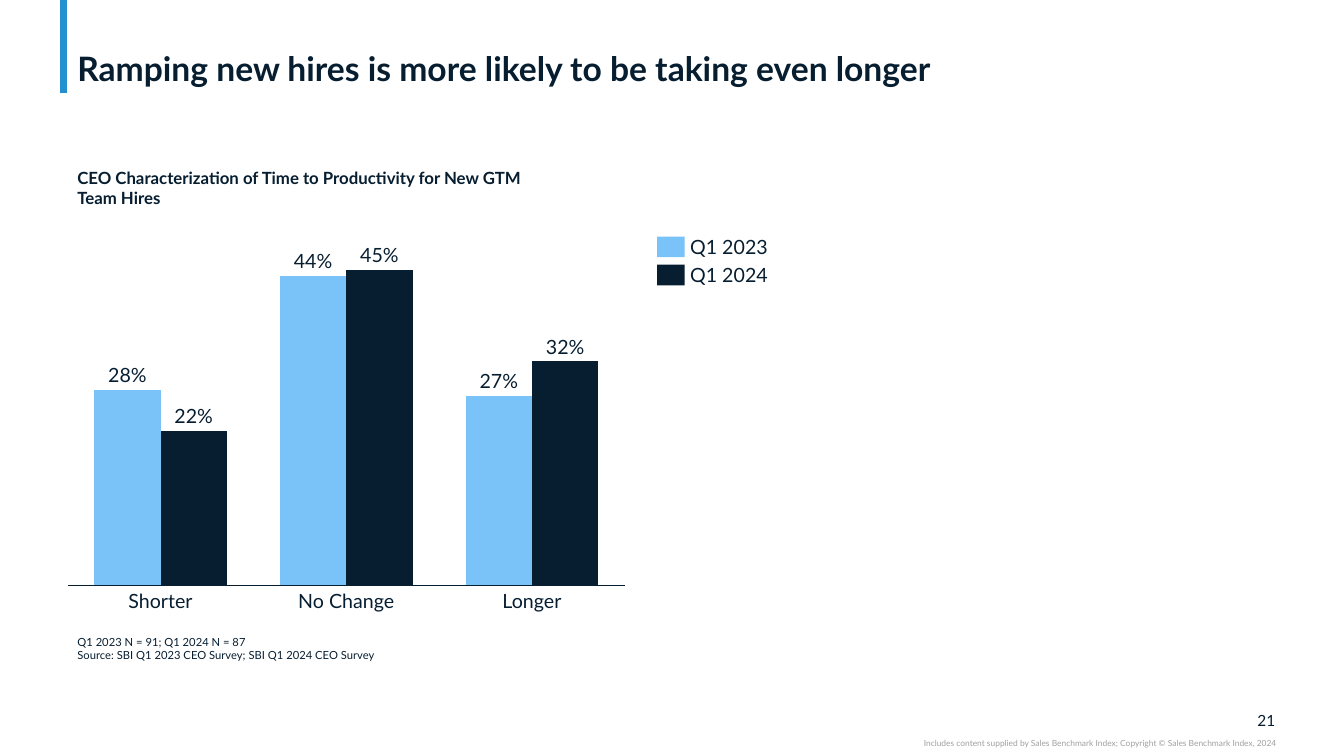
from dataclasses import dataclass

from lxml import etree
from pptx import Presentation
from pptx.chart.data import CategoryChartData
from pptx.dml.color import RGBColor
from pptx.enum.chart import XL_CHART_TYPE as ChartType, XL_TICK_LABEL_POSITION as LabelPos, XL_TICK_MARK as Tick
from pptx.enum.shapes import MSO_CONNECTOR as Connector, MSO_SHAPE as Shape
from pptx.enum.text import MSO_ANCHOR as Anchor, PP_ALIGN as Align
from pptx.oxml import parse_xml
from pptx.oxml.ns import nsdecls, qn
from pptx.util import Pt


@dataclass(frozen=True)
class Theme:
    font: str = "Lato"
    ink: RGBColor = RGBColor(0x07, 0x1E, 0x31)
    sky: RGBColor = RGBColor(0x7A, 0xC3, 0xF8)
    accent: RGBColor = RGBColor(0x23, 0x91, 0xCF)
    muted: RGBColor = RGBColor(0xA0, 0xA0, 0xA0)
    title: float = 24
    label: float = 14
    heading: float = 12
    page: float = 11
    axis: float = 10
    note: float = 8
    legal: float = 6


class SlideBuilder:
    def __init__(self, slide, theme):
        self.shapes = slide.shapes
        self.theme = theme

    def style(self, font, size, color=None, bold=False):
        font.name, font.size, font.bold = self.theme.font, Pt(size), bold
        font.color.rgb = color or self.theme.ink

    def text(self, box, lines, size, color=None, bold=False, align=Align.LEFT,
             anchor=Anchor.TOP, insets=(0, 0), spacing=None, wrap=True):
        """Box is left, top, width, height; insets are side and top/bottom."""
        frame = self.shapes.add_textbox(*map(Pt, box)).text_frame
        frame.word_wrap, frame.vertical_anchor = wrap, anchor
        frame.margin_left = frame.margin_right = Pt(insets[0])
        frame.margin_top = frame.margin_bottom = Pt(insets[1])
        frame.text = lines
        for paragraph in frame.paragraphs:
            paragraph.alignment = align
            paragraph.line_spacing = spacing
            self.style(paragraph.font, size, color, bold)

    def chart_label(self, box, words, align=Align.CENTER, **options):
        self.text(box, words, self.theme.label, align=align, spacing=0.9, wrap=False, **options)

    def line(self, start, end, color, weight):
        rule = self.shapes.add_connector(Connector.STRAIGHT, *map(Pt, start + end))
        rule.line.color.rgb, rule.line.width = color, Pt(weight)
        etree.SubElement(rule._element.spPr, qn("a:effectLst"))

    def swatch(self, box, color):
        square = self.shapes.add_shape(Shape.RECTANGLE, *map(Pt, box))
        square.shadow.inherit = False
        square.fill.solid()
        square.fill.fore_color.rgb = color
        square.line.fill.background()

    def columns(self, box, plot, categories, series, gap):
        """Draw clustered columns; plot holds the inner plot area as fractions of the box."""
        data = CategoryChartData()
        data.categories = categories
        for name, heights, _ in series:
            data.add_series(name, heights)
        chart = self.shapes.add_chart(ChartType.COLUMN_CLUSTERED, *map(Pt, box), data).chart
        chart.has_legend = chart.has_title = False
        self.style(chart.font, self.theme.axis)

        bars = chart.plots[0]
        bars.gap_width, bars.overlap, bars.vary_by_categories = gap, 0, False
        for column, (_, _, color) in zip(bars.series, series):
            column.format.fill.solid()
            column.format.fill.fore_color.rgb = color

        baseline = chart.category_axis
        baseline.tick_label_position = LabelPos.NONE
        baseline.major_tick_mark = baseline.minor_tick_mark = Tick.NONE
        baseline.format.line.color.rgb = self.theme.ink
        baseline.format.line.width = Pt(0.75)
        scale = chart.value_axis
        scale.minimum_scale, scale.maximum_scale = 0, 100
        scale.has_major_gridlines = scale.visible = False

        modes = '<c:layoutTarget val="inner"/><c:xMode val="edge"/><c:yMode val="edge"/>'
        sizes = "".join(f'<c:{key} val="{part}"/>' for key, part in zip("xywh", plot))
        area = chart._chartSpace.chart.plotArea
        for layout in area.findall(qn("c:layout")):
            area.remove(layout)
        area.insert(0, parse_xml(f'<c:layout {nsdecls("c")}><c:manualLayout>{modes}{sizes}'
                                 '</c:manualLayout></c:layout>'))


def add_survey_chart(page):
    theme = page.theme
    categories = ["Shorter", "No Change", "Longer"]
    series = [("Series 1", (62, 98, 60), theme.sky), ("Series 2", (49, 100, 71), theme.ink)]
    shares = [("28%", "44%", "27%"), ("22%", "45%", "32%")]
    left, top, width, height = box = (41.8, 186.5, 411.1, 238.3)
    plot = (0.016, 0.027, 0.968, 0.945)
    gap = 80
    page.columns(box, plot, ["1", "2", "3"], series, gap)

    plot_left, plot_top = left + plot[0] * width, top + plot[1] * height
    plot_height = plot[3] * height
    step = plot[2] * width / len(categories)
    bar = step / (len(series) + gap / 100)
    label_width, label_height = 32, 15
    for index, category in enumerate(categories):
        center = plot_left + (index + 0.5) * step
        page.chart_label((center - step / 2, 422.6, step, label_height), category)
        for side, (_, heights, _) in enumerate(series):
            bar_center = center + (side - 0.5) * bar
            bar_top = plot_top + plot_height * (1 - heights[index] / 100)
            page.chart_label((bar_center - label_width / 2, bar_top - label_height - 2.3,
                              label_width, label_height), shares[side][index],
                             anchor=Anchor.BOTTOM, insets=(2, 0))

    for row, (period, (_, _, color)) in enumerate(zip(("Q1 2023", "Q1 2024"), series)):
        row_top = 169 + 20 * row
        page.swatch((469.3, row_top, 19.8, 14.8), color)
        page.chart_label((493, row_top + 0.6, 56, 15), period, Align.LEFT, anchor=Anchor.MIDDLE)


def main():
    deck = Presentation()
    deck.slide_width, deck.slide_height = Pt(960), Pt(540)
    theme = Theme()
    page = SlideBuilder(deck.slides.add_slide(deck.slide_layouts[6]), theme)

    page.line((45.4, 0), (45.4, 66.4), theme.accent, 5)
    page.text((887, 507.6, 24, 13.7), "21", theme.page, align=Align.RIGHT, anchor=Anchor.MIDDLE)
    page.text((540, 527, 371.5, 7.2),
              "Includes content supplied by Sales Benchmark Index; Copyright © Sales Benchmark Index, 2024",
              theme.legal, theme.muted, align=Align.RIGHT)
    page.text((48.2, 2.9, 863.3, 60.5), "Ramping new hires is more likely to be taking even longer",
              theme.title, bold=True, anchor=Anchor.BOTTOM, insets=(7.2, 0), spacing=0.9)
    page.text((48.2, 450, 294.5, 26.6),
              "Q1 2023 N = 91; Q1 2024 N = 87\nSource: SBI Q1 2023 CEO Survey; SBI Q1 2024 CEO Survey",
              theme.note, insets=(7.2, 3.6))
    page.text((48.2, 116, 338.4, 36),
              "CEO Characterization of Time to Productivity for New GTM Team Hires",
              theme.heading, bold=True, insets=(7.2, 3.6))
    add_survey_chart(page)
    deck.save("out.pptx")


if __name__ == "__main__":
    main()
